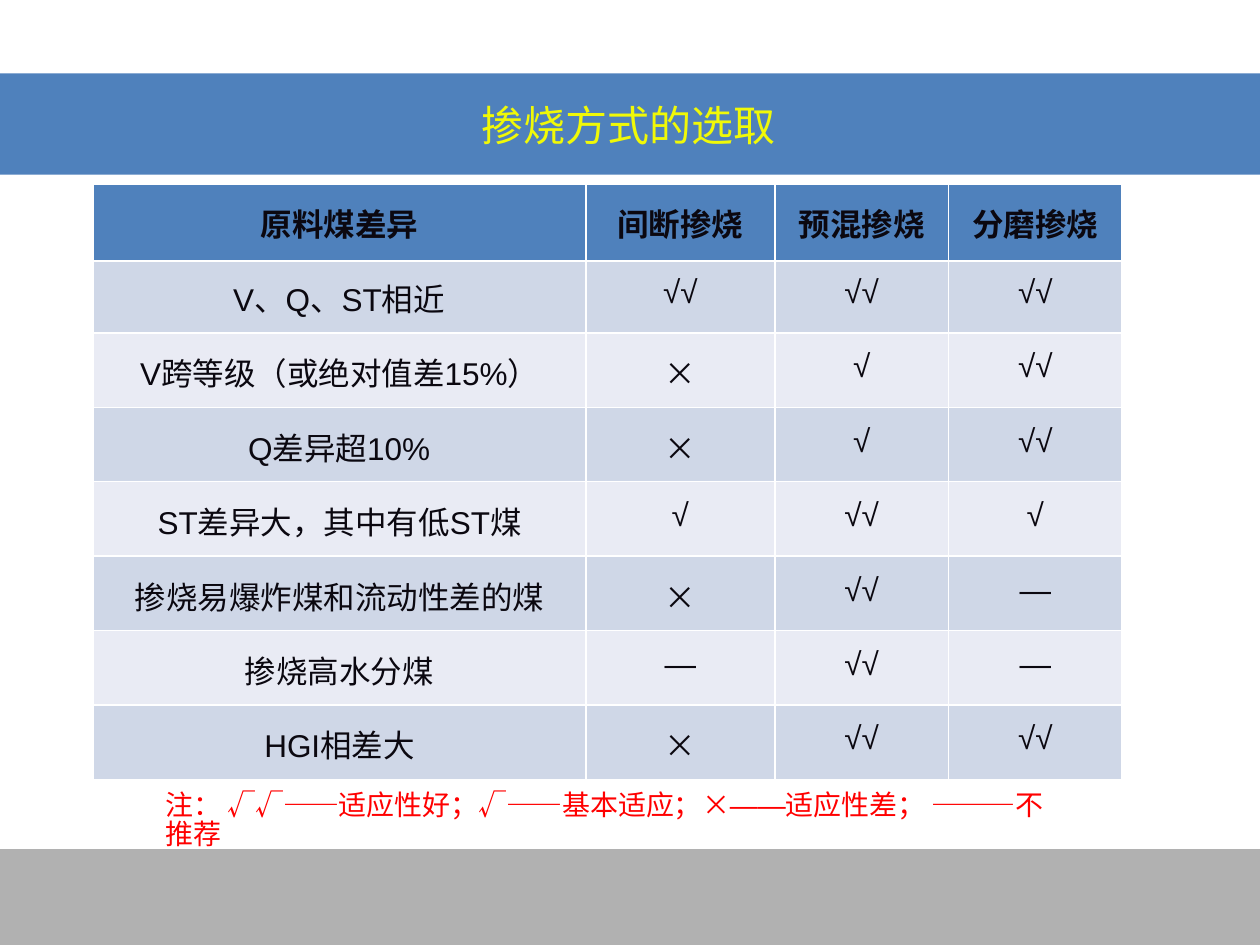
from dataclasses import dataclass
from itertools import groupby

from lxml.etree import SubElement
from pptx import Presentation
from pptx.dml.color import RGBColor
from pptx.enum.shapes import MSO_SHAPE as Preset
from pptx.enum.text import MSO_ANCHOR as Anchor, PP_ALIGN as Align
from pptx.oxml.ns import qn
from pptx.util import Cm, Pt

LATIN_FONT = "Arial"
HAN_FONT = "Noto Sans CJK SC"
BLUE = "4F81BC"
INK = "0B0810"
WHITE = "FFFFFF"
STRIPES = ("CFD7E7", "E9EBF4")
COLUMN_WIDTHS = (9.93, 3.81, 3.5, 3.5)
ROW_HEIGHTS = (1.55, 1.45, *[1.5] * 6)


@dataclass(frozen=True)
class Band:
    top: float
    height: float
    color: str


@dataclass(frozen=True)
class Label:
    text: str
    left: float
    top: float
    width: float
    height: float
    size: int
    color: str
    spacing: float = 1.0


@dataclass(frozen=True)
class CoalRow:
    name: str
    marks: tuple[str, str, str]
    indent: float | None = None


BANDS = (Band(17.12, 1.93, "B1B1B1"), Band(1.48, 2.04, BLUE))
LABELS = (
    Label("掺烧方式的选取", 9.7, 2.0, 6.1, 1.09, 24, "F0F907"),
    Label("注： √√——适应性好；√——基本适应；×——适应性差； ———不推荐",
          3.33, 15.98, 18.24, 0.74, 16, "FF0000", 0.85),
)
HEADER = CoalRow("原料煤差异", ("间断掺烧", "预混掺烧", "分磨掺烧"))
COAL_ROWS = (
    CoalRow("V、Q、ST相近", ("√√", "√√", "√√"), 2.82),
    CoalRow("V跨等级（或绝对值差15%）", ("×", "√", "√√")),
    CoalRow("Q差异超10%", ("×", "√", "√√"), 3.12),
    CoalRow("ST差异大，其中有低ST煤", ("√", "√√", "√")),
    CoalRow("掺烧易爆炸煤和流动性差的煤", ("×", "√√", "—")),
    CoalRow("掺烧高水分煤", ("—", "√√", "—"), 3.05),
    CoalRow("HGI相差大", ("×", "√√", "√√")),
)


def rgb(color: str) -> RGBColor:
    return RGBColor.from_string(color)


def is_latin(character: str) -> bool:
    return character in "√—%" or (character.isascii() and character.isalnum())


def write_spans(para, text: str, size: int, color: str, bold: bool = False) -> None:
    for latin, characters in groupby(text, is_latin):
        span = para.add_run()
        span.text = "".join(characters)
        font = span.font
        font.size, font.bold = Pt(size), bold
        font.color.rgb = rgb(color)
        font.name = LATIN_FONT if latin else HAN_FONT
        if not latin:
            SubElement(font._element, qn("a:ea"), typeface=HAN_FONT)


def draw_band(page, band: Band) -> None:
    box = page.shapes.add_shape(Preset.RECTANGLE, 0, Cm(band.top), Cm(25.4), Cm(band.height))
    box.shadow.inherit = False
    box.fill.solid()
    box.fill.fore_color.rgb = rgb(band.color)
    box.line.fill.background()


def draw_label(page, label: Label) -> None:
    box = page.shapes.add_textbox(Cm(label.left), Cm(label.top), Cm(label.width), Cm(label.height))
    frame = box.text_frame
    frame.word_wrap = True
    frame.margin_left = frame.margin_top = frame.margin_right = frame.margin_bottom = 0
    para = frame.paragraphs[0]
    para.line_spacing = label.spacing
    write_spans(para, label.text, label.size, label.color)


def add_borders(cell, sides: str) -> None:
    properties = cell._tc.get_or_add_tcPr()
    for position, side in enumerate(sides):
        border = properties.makeelement(qn(f"a:ln{side}"), {"w": str(Pt(1))})
        fill = SubElement(border, qn("a:solidFill"))
        SubElement(fill, qn("a:srgbClr"), val=WHITE)
        properties.insert(position, border)


def fill_cell(cell, text: str, color: str, top_inset: float, bold: bool,
              indent: float | None) -> None:
    cell.fill.solid()
    cell.fill.fore_color.rgb = rgb(color)
    cell.margin_left = cell.margin_right = cell.margin_bottom = 0
    cell.margin_top = Cm(top_inset)
    cell.vertical_anchor = Anchor.TOP
    para = cell.text_frame.paragraphs[0]
    if indent is None:
        para.alignment = Align.CENTER
    else:
        para._p.get_or_add_pPr().set("marL", str(Cm(indent)))
    write_spans(para, text, 18, INK, bold)


def draw_table(page) -> None:
    rows = (HEADER, *COAL_ROWS)
    table = page.shapes.add_table(len(rows), len(COLUMN_WIDTHS), Cm(1.88), Cm(3.71),
                                  Cm(sum(COLUMN_WIDTHS)), Cm(sum(ROW_HEIGHTS))).table
    for column, width in zip(table.columns, COLUMN_WIDTHS):
        column.width = Cm(width)
    for number, (row, height) in enumerate(zip(rows, ROW_HEIGHTS)):
        table.rows[number].height = Cm(height)
        is_header = number == 0
        color = BLUE if is_header else STRIPES[(number - 1) % 2]
        sides = {0: "LRT", 1: "LRB"}.get(number, "LRTB")
        top_inset = 0.28 if number == 1 else 0.33
        for position, text in enumerate((row.name, *row.marks)):
            cell = table.cell(number, position)
            indent = row.indent if position == 0 else None
            fill_cell(cell, text, color, top_inset, is_header, indent)
            add_borders(cell, sides)


def main() -> None:
    deck = Presentation()
    deck.slide_width, deck.slide_height = Cm(25.4), Cm(19.05)
    page = deck.slides.add_slide(deck.slide_layouts[6])
    for band in BANDS:
        draw_band(page, band)
    draw_table(page)
    for label in LABELS:
        draw_label(page, label)
    deck.save("out.pptx")


if __name__ == "__main__":
    main()
